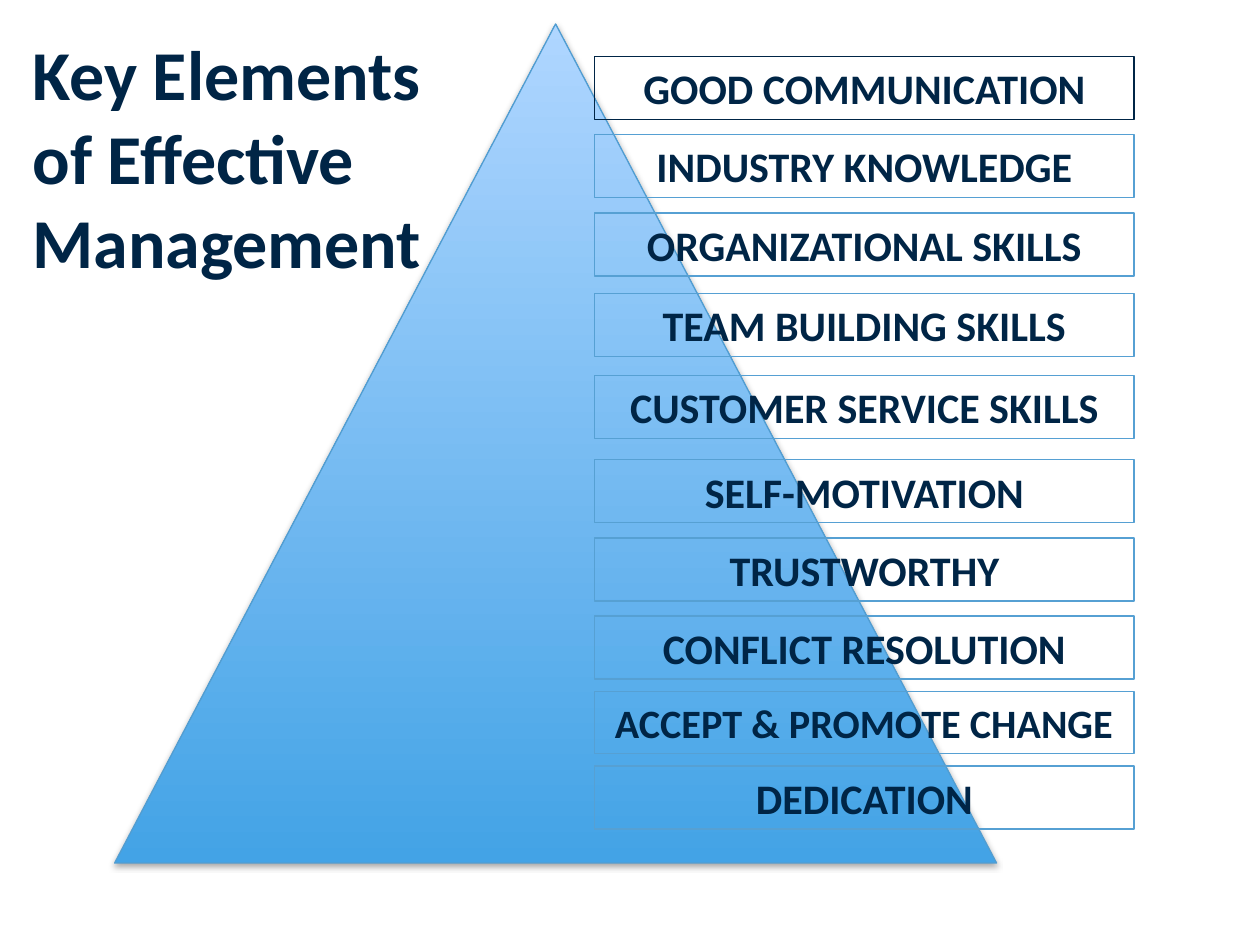
from dataclasses import dataclass

from lxml.etree import SubElement
from pptx import Presentation
from pptx.dml.color import RGBColor
from pptx.enum.shapes import MSO_SHAPE as Preset
from pptx.enum.text import MSO_ANCHOR as Anchor, MSO_AUTO_SIZE as AutoSize, PP_ALIGN as Align
from pptx.oxml.ns import qn
from pptx.util import Inches, Pt

NAVY = "002546"
BLUE = "56A0D3"
PYRAMID_EDGE = "519DD1"
PYRAMID_BASE, PYRAMID_TIP = "43A3E6", "AFD6FF"

ELEMENT_LEFT, ELEMENT_WIDTH = 4.72, 4.28


@dataclass(frozen=True)
class Element:
    label: str
    top: float
    height: float = 0.5
    size: int = 24
    border: str = BLUE


ELEMENTS = [
    Element("GOOD COMMUNICATION", 0.45, border=NAVY),
    Element("INDUSTRY KNOWLEDGE", 1.07),
    Element("ORGANIZATIONAL SKILLS", 1.69),
    Element("TEAM BUILDING SKILLS", 2.33),
    Element("CUSTOMER SERVICE SKILLS", 2.98),
    Element("SELF-MOTIVATION", 3.65),
    Element("TRUSTWORTHY", 4.27),
    Element("CONFLICT RESOLUTION", 4.89),
    Element("ACCEPT & PROMOTE CHANGE", 5.49, height=0.49, size=23),
    Element("DEDICATION", 6.08),
]


def color(hex_value: str) -> RGBColor:
    return RGBColor.from_string(hex_value)


def set_all(target, values: dict) -> None:
    for name, value in values.items():
        setattr(target, name, value)


def box(left: float, top: float, width: float, height: float) -> list:
    return [Inches(length) for length in (left, top, width, height)]


def write(shape, text: str, size: int, align: Align) -> None:
    frame = shape.text_frame
    set_all(frame, {
        "word_wrap": True,
        "auto_size": AutoSize.SHAPE_TO_FIT_TEXT,
        "vertical_anchor": Anchor.TOP,
    })
    paragraph = frame.paragraphs[0]
    paragraph.alignment = align
    run = paragraph.add_run()
    run.text = text
    set_all(run.font, {"name": "Calibri", "size": Pt(size), "bold": True})
    run.font.color.rgb = color(NAVY)


def outline(shape, hex_value: str) -> None:
    shape.line.color.rgb = color(hex_value)
    shape.line.width = Pt(0.75)


def add_soft_shadow(shape) -> None:
    shape.shadow.inherit = False
    effects = shape.element.spPr.find(qn("a:effectLst"))
    shadow = SubElement(effects, qn("a:outerShdw"), {
        "blurRad": str(Pt(3.1)), "dist": str(Pt(1.8)),
        "dir": "5400000", "rotWithShape": "0",
    })
    black = SubElement(shadow, qn("a:srgbClr"), val="000000")
    SubElement(black, qn("a:alpha"), val="35000")


def draw_pyramid(slide) -> None:
    pyramid = slide.shapes.add_shape(Preset.ISOSCELES_TRIANGLE, *box(0.91, 0.19, 7, 6.66))
    pyramid.fill.gradient()
    pyramid.fill.gradient_angle = 90
    for stop, shade in zip(pyramid.fill.gradient_stops, (PYRAMID_BASE, PYRAMID_TIP)):
        stop.color.rgb = color(shade)
    outline(pyramid, PYRAMID_EDGE)
    add_soft_shadow(pyramid)


def draw_element(slide, element: Element) -> None:
    place = box(ELEMENT_LEFT, element.top, ELEMENT_WIDTH, element.height)
    label = slide.shapes.add_shape(Preset.RECTANGLE, *place)
    label.shadow.inherit = False
    label.fill.background()
    outline(label, element.border)
    write(label, element.label, element.size, Align.CENTER)


def main() -> None:
    deck = Presentation()
    set_all(deck, {"slide_width": Inches(10), "slide_height": Inches(7.5)})
    slide = deck.slides.add_slide(deck.slide_layouts[6])

    # Pyramid behind the list
    draw_pyramid(slide)

    # Management elements, top to bottom
    for element in ELEMENTS:
        draw_element(slide, element)

    # Title
    title = slide.shapes.add_textbox(*box(0.16, 0.19, 3.46, 2.12))
    write(title, "Key Elements of Effective Management", 40, Align.LEFT)

    deck.save("out.pptx")


if __name__ == "__main__":
    main()
